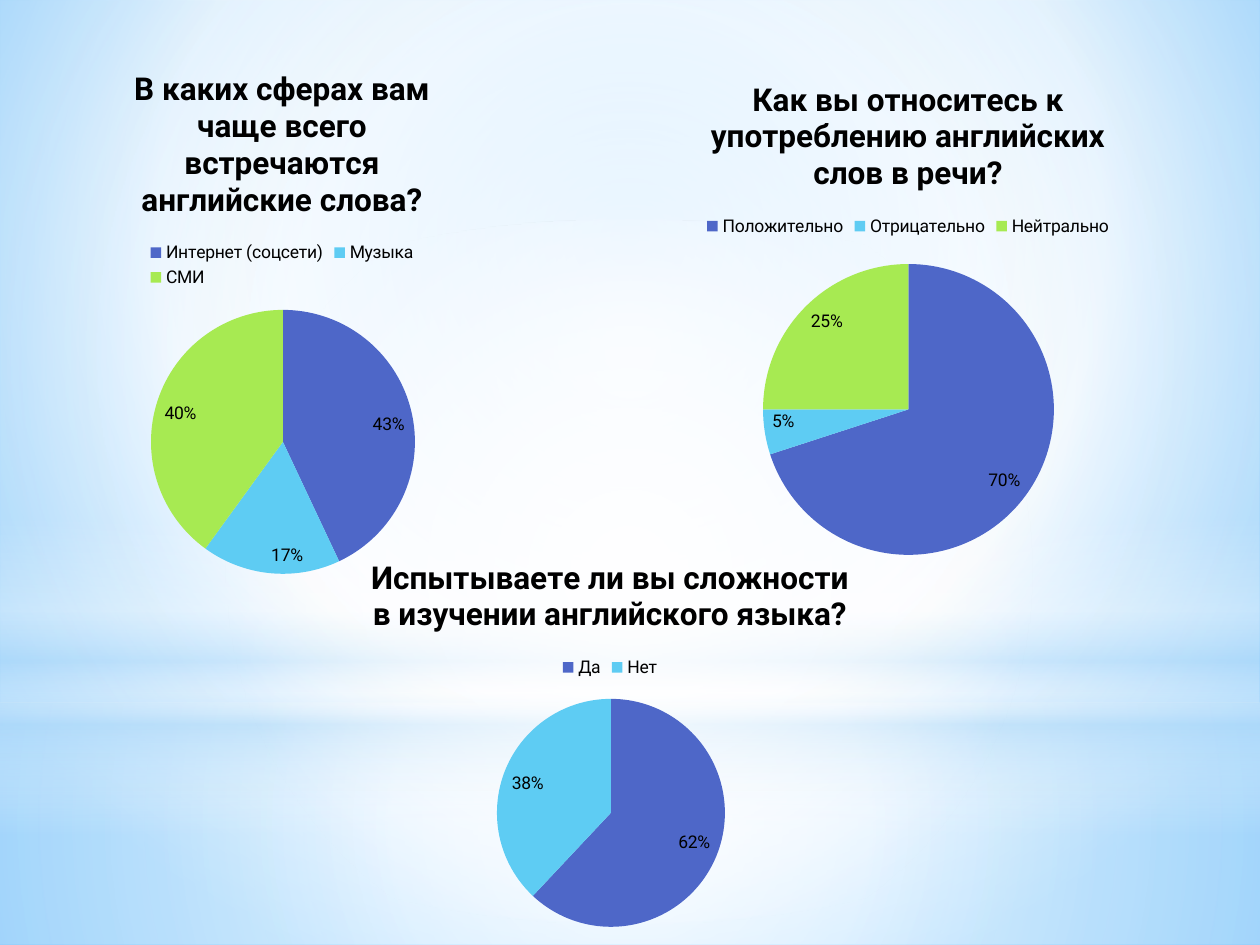
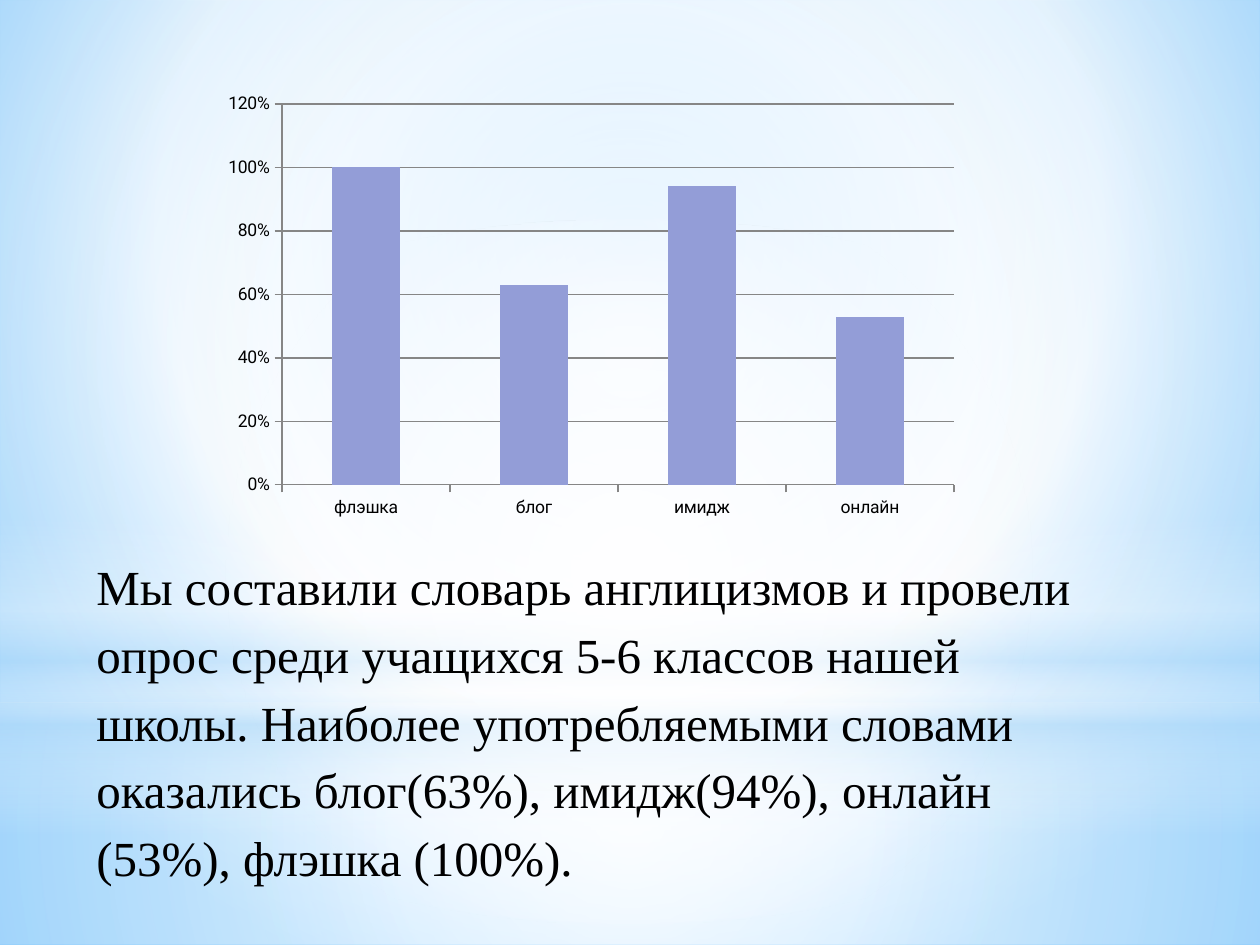
from dataclasses import dataclass

from pptx import Presentation
from pptx.chart.data import CategoryChartData
from pptx.dml.color import RGBColor
from pptx.enum.chart import XL_CHART_TYPE, XL_LABEL_POSITION, XL_LEGEND_POSITION, XL_TICK_MARK
from pptx.enum.shapes import MSO_SHAPE
from pptx.oxml import parse_xml
from pptx.oxml.ns import nsdecls, qn
from pptx.util import Pt

PIE, COLUMN = XL_CHART_TYPE.PIE, XL_CHART_TYPE.COLUMN_CLUSTERED
LABEL_INSIDE = XL_LABEL_POSITION.INSIDE_END
LEGEND_TOP = XL_LEGEND_POSITION.TOP
TICK_OUT = XL_TICK_MARK.OUTSIDE
RECTANGLE, ELLIPSE = MSO_SHAPE.RECTANGLE, MSO_SHAPE.OVAL

PX = 914400 / 126
SLIDE_WIDTH, SLIDE_HEIGHT = 1260, 945


def emu(pixels):
    return round(pixels * PX)


@dataclass(frozen=True)
class Theme:
    text: str = "000000"
    slices: tuple = ("4E67C8", "5ECCF3", "A7EA52")
    column: str = "939DD7"
    axis: str = "868686"
    white: str = "FFFFFF"
    haze: str = "B4DCFA"
    sky: str = "9ED5FF"
    deep_sky: str = "5BB9FF"
    chart_font: str = "Roboto"
    body_font: str = "Times New Roman"
    label_size: int = 10
    title_size: int = 18
    body_size: int = 28


THEME = Theme()
CENTRE = (50, 50, 50, 50)

# Gradient stops: position, colour, opacity in percent
SKY_STOPS = [(0, THEME.sky, 100), (60, THEME.white, 100), (100, THEME.deep_sky, 100)]
FLOOR_STOPS = [(0, THEME.white, 91), (37, THEME.white, 76), (100, THEME.haze, 79)]
WALL_STOPS = [(0, THEME.white, 89), (48, THEME.white, 62), (100, THEME.haze, 79)]
HORIZON_STOPS = [(0, THEME.white, 0), (29, THEME.white, 30), (45, THEME.haze, 40),
                 (55, THEME.white, 26), (65, THEME.haze, 60), (100, THEME.white, 0)]
GLOW_STOPS = [(0, THEME.white, 100), (56, THEME.white, 0)]

# Master layers: preset, box, stops, focus (None means top to bottom)
LAYERS = [
    (RECTANGLE, (0, 703, 1260, 242), FLOOR_STOPS, CENTRE),
    (RECTANGLE, (0, 0, 1260, 703), WALL_STOPS, CENTRE),
    (RECTANGLE, (0, 519, 1260, 315), HORIZON_STOPS, None),
    (ELLIPSE, (0, 220, 1260, 703), GLOW_STOPS, CENTRE),
]

# Survey pies: question, chart box, pie box, answers
PIES = [
    ("В каких сферах вам чаще всего встречаются английские слова?",
     (44, 45, 476, 546), (151, 310, 264, 264),
     {"Интернет (соцсети)": 43, "Музыка": 17, "СМИ": 40}),
    ("Как вы относитесь к употреблению английских слов в речи?",
     (640, 55, 536, 556), (763, 264, 291, 291),
     {"Положительно": 70, "Отрицательно": 5, "Нейтрально": 25}),
    ("Испытываете ли вы сложности в изучении английского языка?",
     (292, 536, 636, 409), (497, 699, 228, 228),
     {"Да": 62, "Нет": 38}),
]

WORD_USE = {"флэшка": 1, "блог": 0.63, "имидж": 0.94, "онлайн": 0.53}
CONCLUSION = ("Мы составили словарь англицизмов и провели опрос среди учащихся "
              "5-6 классов нашей школы. Наиболее употребляемыми словами оказались "
              "блог(63%), имидж(94%), онлайн (53%), флэшка (100%).")


class Deck:
    """Holds the theme and the current slide and draws each kind of element."""

    def __init__(self, theme):
        self.theme = theme
        self.presentation = Presentation()
        self.presentation.slide_width = emu(SLIDE_WIDTH)
        self.presentation.slide_height = emu(SLIDE_HEIGHT)
        self.slide = None

    def new_slide(self):
        blank = self.presentation.slide_layouts[6]
        self.slide = self.presentation.slides.add_slide(blank)

    def set_font(self, font, name, size, bold=False):
        font.name, font.size, font.bold = name, Pt(size), bold
        font.color.rgb = RGBColor.from_string(self.theme.text)

    def set_gradient(self, fill, properties, stops, focus):
        """Paint a radial gradient, or a vertical one without a focus."""
        fill.gradient()
        stop_list = "".join(
            f'<a:gs pos="{position * 1000}"><a:srgbClr val="{colour}">'
            f'<a:alpha val="{opacity * 1000}"/></a:srgbClr></a:gs>'
            for position, colour, opacity in stops)
        direction = '<a:lin ang="5400000" scaled="0"/>'
        if focus:
            edges = " ".join(f'{edge}="{value * 1000}"' for edge, value in zip("ltrb", focus))
            direction = f'<a:path path="circle"><a:fillToRect {edges}/></a:path>'
        gradient = parse_xml(f'<a:gradFill {nsdecls("a")} rotWithShape="1">'
                             f'<a:gsLst>{stop_list}</a:gsLst>{direction}</a:gradFill>')
        properties.replace(properties.find(qn("a:gradFill")), gradient)

    def dress_master(self):
        """Put the sky and its translucent layers on the slide master."""
        master = self.presentation.slide_master
        fill = master.background.fill
        properties = master.element.xpath("p:cSld/p:bg/p:bgPr")[0]
        self.set_gradient(fill, properties, SKY_STOPS, (20, 10, 20, 60))
        for index, (preset, box, stops, focus) in enumerate(LAYERS):
            shape = self.slide.shapes.add_shape(preset, *map(emu, box))
            shape.shadow.inherit = False
            shape.line.fill.background()
            self.set_gradient(shape.fill, shape.element.spPr, stops, focus)
            shape.element.nvSpPr.cNvPr.id = 100 + index
            master.shapes.element.insert(2 + index, shape.element)

    def add_chart(self, kind, box, plot_box, name, values, number_format):
        """Add a chart whose inner plot area fills plot_box."""
        data = CategoryChartData(number_format=number_format)
        data.categories = list(values)
        data.add_series(name, list(values.values()))
        chart = self.slide.shapes.add_chart(kind, *map(emu, box), data).chart
        self.set_font(chart.font, self.theme.chart_font, self.theme.label_size)
        left, top, width, height = box
        fractions = {"x": (plot_box[0] - left) / width, "y": (plot_box[1] - top) / height,
                     "w": plot_box[2] / width, "h": plot_box[3] / height}
        sizes = "".join(f'<c:{key} val="{value:.4f}"/>' for key, value in fractions.items())
        layout = parse_xml(
            f'<c:layout {nsdecls("c")}><c:manualLayout><c:layoutTarget val="inner"/>'
            f'<c:xMode val="edge"/><c:yMode val="edge"/>{sizes}</c:manualLayout></c:layout>')
        plot_area = chart.element.xpath("c:chart/c:plotArea")[0]
        for previous in plot_area.findall(qn("c:layout")):
            plot_area.remove(previous)
        plot_area.insert(0, layout)
        return chart

    def add_pie(self, question, box, pie_box, answers):
        chart = self.add_chart(PIE, box, pie_box, question, answers, "General")
        # Title and legend
        chart.has_title = True
        title = chart.chart_title
        title.include_in_layout = False
        title.text_frame.text = question
        for run in title.text_frame.paragraphs[0].runs:
            self.set_font(run.font, self.theme.chart_font, self.theme.title_size, True)
        chart.has_legend = True
        chart.legend.position = LEGEND_TOP
        chart.legend.include_in_layout = False
        # Slices and percentages
        plot = chart.plots[0]
        plot.vary_by_categories = True
        for index, colour in enumerate(self.theme.slices[:len(answers)]):
            fill = plot.series[0].points[index].format.fill
            fill.solid()
            fill.fore_color.rgb = RGBColor.from_string(colour)
        plot.has_data_labels = True
        labels = plot.data_labels
        labels.show_percentage, labels.show_value = True, False
        labels.number_format, labels.number_format_is_linked = "0%", False
        labels.position = LABEL_INSIDE

    def add_columns(self, name, box, plot_box, values):
        chart = self.add_chart(COLUMN, box, plot_box, name, values, "0%")
        chart.has_title = chart.has_legend = False
        plot = chart.plots[0]
        plot.vary_by_categories = False
        plot.gap_width = 150
        fill = plot.series[0].format.fill
        fill.solid()
        fill.fore_color.rgb = RGBColor.from_string(self.theme.column)
        # Axes and grid
        value_axis, category_axis = chart.value_axis, chart.category_axis
        value_axis.minimum_scale, value_axis.maximum_scale = 0, 1.2
        value_axis.major_unit = 0.2
        value_axis.has_major_gridlines = True
        value_axis.tick_labels.number_format = "0%"
        value_axis.tick_labels.number_format_is_linked = False
        for axis in (value_axis, category_axis):
            axis.major_tick_mark = TICK_OUT
        for part in (value_axis, category_axis, value_axis.major_gridlines):
            part.format.line.color.rgb = RGBColor.from_string(self.theme.axis)
            part.format.line.width = Pt(0.75)

    def add_text(self, text, box):
        text_frame = self.slide.shapes.add_textbox(*map(emu, box)).text_frame
        text_frame.word_wrap = True
        text_frame.text = text
        paragraph = text_frame.paragraphs[0]
        paragraph.line_spacing = 1.15
        paragraph.space_after = Pt(10)
        for run in paragraph.runs:
            self.set_font(run.font, self.theme.body_font, self.theme.body_size)


def main():
    deck = Deck(THEME)

    # Survey answers
    deck.new_slide()
    deck.dress_master()
    for pie in PIES:
        deck.add_pie(*pie)

    # Most used words
    deck.new_slide()
    deck.add_text(CONCLUSION, (84, 542, 1002, 390))
    deck.add_columns("Доля", (213, 86, 756, 441), (282, 104, 672, 381), WORD_USE)

    deck.presentation.save("out.pptx")


if __name__ == "__main__":
    main()
